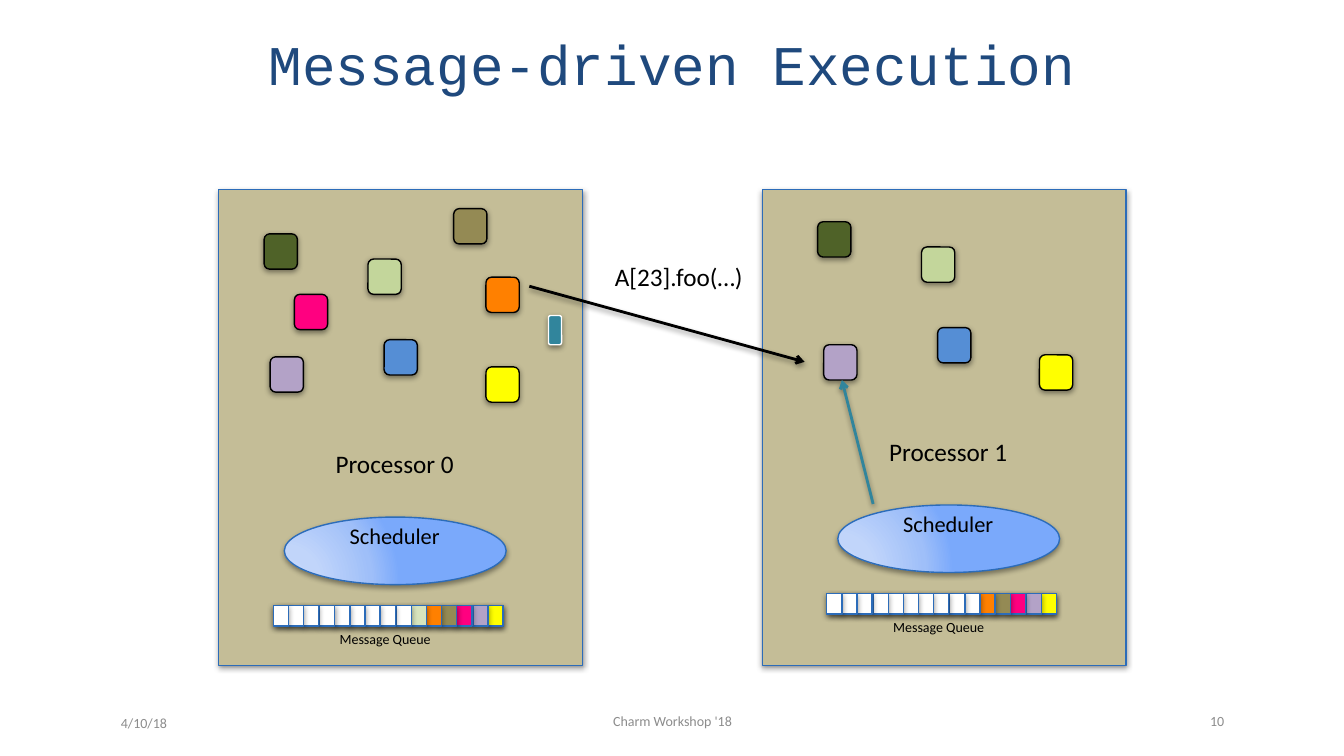
from pptx import Presentation
from pptx.dml.color import RGBColor
from pptx.enum.shapes import MSO_CONNECTOR, MSO_SHAPE
from pptx.enum.text import MSO_ANCHOR, MSO_AUTO_SIZE, PP_ALIGN
from pptx.oxml import parse_xml
from pptx.oxml.ns import nsdecls, qn
from pptx.util import Pt

PX = 9144  # EMU in one px, 100 px to the inch

RECT, ROUND, OVAL = MSO_SHAPE.RECTANGLE, MSO_SHAPE.ROUNDED_RECTANGLE, MSO_SHAPE.OVAL
STRAIGHT = MSO_CONNECTOR.STRAIGHT
LEFT, CENTER, RIGHT = PP_ALIGN.LEFT, PP_ALIGN.CENTER, PP_ALIGN.RIGHT
TOP, MIDDLE = MSO_ANCHOR.TOP, MSO_ANCHOR.MIDDLE
FIXED, GROW = MSO_AUTO_SIZE.NONE, MSO_AUTO_SIZE.SHAPE_TO_FIT_TEXT

BLACK = RGBColor(0x00, 0x00, 0x00)
WHITE = RGBColor(0xFF, 0xFF, 0xFF)
NAVY = RGBColor(0x1F, 0x49, 0x7D)
GRAY = RGBColor(0x8C, 0x8C, 0x8C)
EDGE = RGBColor(0x2C, 0x6C, 0xB9)
TAN = RGBColor(0xC4, 0xBD, 0x97)
DARK_GREEN = RGBColor(0x4F, 0x62, 0x28)
GREEN = RGBColor(0xC3, 0xD6, 0x9B)
PALE_GREEN = RGBColor(0xD7, 0xE4, 0xBD)
PURPLE = RGBColor(0xB3, 0xA2, 0xC7)
BLUE = RGBColor(0x55, 0x8E, 0xD5)
YELLOW = RGBColor(0xFF, 0xFF, 0x00)
OLIVE = RGBColor(0x94, 0x8A, 0x54)
PINK = RGBColor(0xFF, 0x00, 0x80)
ORANGE = RGBColor(0xFF, 0x80, 0x00)
TEAL = RGBColor(0x31, 0x85, 0x9C)
OVAL_STOPS = [(0, RGBColor(0xC7, 0xD8, 0xFB)), (30, RGBColor(0xC1, 0xD5, 0xFA)),
              (75, RGBColor(0x9F, 0xBF, 0xF9)), (100, RGBColor(0x7A, 0xA9, 0xFB))]

CELL_COUNT, CELL_STEP = 15, 15.2
SHARED_CHARES = [(262, 232, DARK_GREEN), (365, 257, GREEN), (268, 354, PURPLE),
                 (381, 337, BLUE), (482, 364, YELLOW)]
LOCAL_CHARES = [(450, 207, OLIVE), (292, 292, PINK), (482, 275, ORANGE)]
QUEUED = [ORANGE, OLIVE, PINK, PURPLE, YELLOW]


class Diagram:
    """Draws elements in one style on the current slide or group."""

    font = "Calibri"

    def __init__(self, slide):
        self.slide = slide
        self.shapes = slide.shapes

    def format_text(self, sp, text, size, color, align, anchor=TOP, fit=FIXED, font=None):
        tf = sp.text_frame
        tf.text = text
        frame_format = {"word_wrap": True, "auto_size": fit, "vertical_anchor": anchor}
        for name, value in frame_format.items():
            setattr(tf, name, value)
        p = tf.paragraphs[0]
        p.alignment = align
        f = p.runs[0].font
        for name, value in {"name": font or self.font, "size": Pt(size)}.items():
            setattr(f, name, value)
        f.color.rgb = color

    def title(self, box, text):
        sp = self.slide.shapes.title
        for name, value in zip(("left", "top", "width", "height"), box):
            setattr(sp, name, value * PX)
        self.format_text(sp, text, 40, NAVY, CENTER, MIDDLE, font="Courier New")

    def text(self, box, text, size, color=BLACK, align=CENTER, anchor=TOP, fit=GROW):
        sp = self.shapes.add_textbox(*(v * PX for v in box))
        self.format_text(sp, text, size, color, align, anchor, fit)

    def shadow(self, sp, alpha, dist):
        sp._element.spPr.append(parse_xml(
            f'<a:effectLst {nsdecls("a")}><a:outerShdw blurRad="{Pt(4)}" dist="{Pt(dist)}" '
            f'dir="5400000" rotWithShape="0"><a:srgbClr val="{BLACK}">'
            f'<a:alpha val="{alpha * 1000}"/></a:srgbClr></a:outerShdw></a:effectLst>'))

    def shape(self, kind, box, fill, line=EDGE, alpha=42, dist=1.6):
        sp = self.shapes.add_shape(kind, *(v * PX for v in box))
        sp.fill.solid()
        sp.fill.fore_color.rgb = fill
        sp.line.color.rgb = line
        sp.line.width = Pt(1)
        self.shadow(sp, alpha, dist)
        return sp

    def oval(self, box):
        """Ellipse with a circular gradient."""
        sp = self.shape(OVAL, box, WHITE, alpha=40, dist=2)
        stops = "".join(f'<a:gs pos="{pos * 1000}"><a:srgbClr val="{color}"/></a:gs>'
                        for pos, color in OVAL_STOPS)
        spPr = sp._element.spPr
        spPr.replace(spPr.find(qn("a:solidFill")), parse_xml(
            f'<a:gradFill {nsdecls("a")} rotWithShape="1"><a:gsLst>{stops}</a:gsLst>'
            '<a:path path="circle"><a:fillToRect l="5000" t="100000" r="120000" b="10000"/>'
            '</a:path></a:gradFill>'))

    def arrow(self, start, end, color):
        cx = self.shapes.add_connector(STRAIGHT, *(v * PX for v in start + end))
        cx.line.color.rgb = color
        cx.line.width = Pt(2)
        cx.line._get_or_add_ln().append(
            parse_xml(f'<a:tailEnd {nsdecls("a")} type="arrow"/>'))
        self.shadow(cx, 40, 2)

    def queue(self, x, y, messages):
        """Row of cells whose last ones hold the given messages."""
        self.shape(RECT, (x + 3, y, 225, 20), WHITE)
        cells = [WHITE] * (CELL_COUNT - len(messages)) + messages
        for i, color in reversed(list(enumerate(cells))):
            self.shape(RECT, (x + round(i * CELL_STEP), y, 15, 20), color)

    def processor(self, name, left, dx, dy, chares, messages):
        """Grouped processor; its contents are shifted by dx, dy."""
        self.shapes = self.slide.shapes.add_group_shape().shapes
        self.shape(RECT, (left, 188, 361, 472), TAN)
        for x, y, color in chares:
            self.shape(ROUND, (x + dx, y + dy, 33, 35), color, BLACK)
        self.text((268 + dx, 440 + dy, 247, 40), name, 18)
        self.oval((282 + dx, 513 + dy, 220, 67))
        self.text((268 + dx, 513 + dy, 247, 37), "Scheduler", 16)
        self.queue(271 + dx, 601 + dy, messages)
        self.text((265 + dx, 621 + dy, 234, 27), "Message Queue", 10)
        self.shapes = self.slide.shapes

    def footer(self, box, text, align):
        self.text(box, text, 10, GRAY, align, MIDDLE, FIXED)


def main():
    prs = Presentation()
    prs.slide_width, prs.slide_height = 1333 * PX, 750 * PX
    s = prs.slides.add_slide(prs.slide_layouts[5])
    d = Diagram(s)

    d.title((44, 17, 1244, 92), "Message-driven Execution")
    d.footer((110, 697, 202, 40), "4/10/18", LEFT)
    d.footer((1083, 695, 141, 40), "10", RIGHT)

    d.processor("Processor 1", 756, 549, -12, SHARED_CHARES, QUEUED)
    d.processor("Processor 0", 217, 0, 0, SHARED_CHARES + LOCAL_CHARES,
                [PALE_GREEN] + QUEUED)

    d.shape(ROUND, (544, 313, 13, 29), TEAL, WHITE)
    d.arrow((525, 284), (798, 359), BLACK)
    d.text((600, 254, 150, 42), "A[23].foo(…)", 18, align=LEFT)
    d.arrow((866, 500), (835, 377), TEAL)
    d.footer((410, 695, 514, 40), "Charm Workshop '18", CENTER)

    prs.save("out.pptx")


if __name__ == "__main__":
    main()
